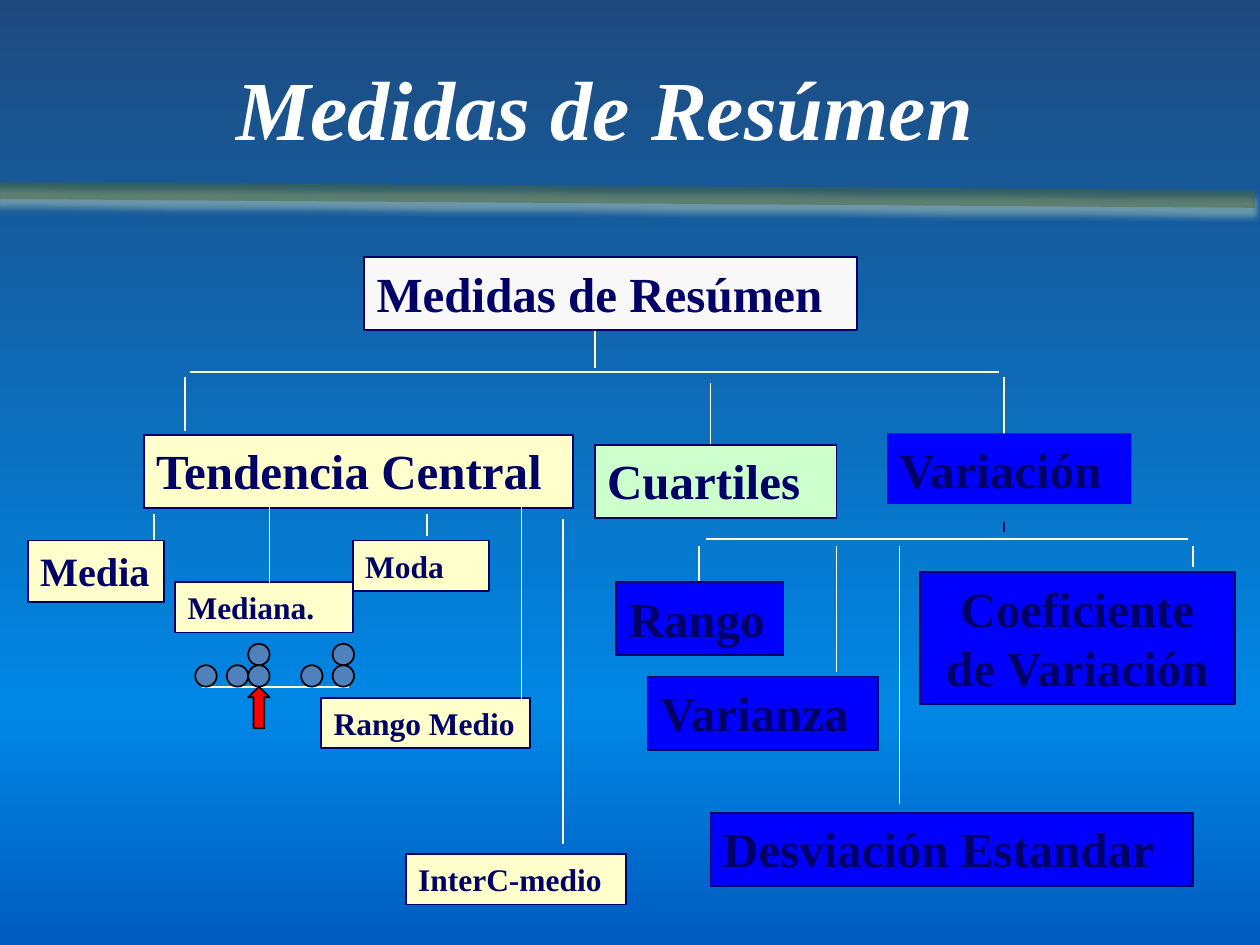
from typing import NamedTuple, Optional

from lxml.etree import SubElement
from pptx import Presentation
from pptx.dml.color import RGBColor
from pptx.enum.shapes import MSO_CONNECTOR, MSO_SHAPE
from pptx.enum.text import MSO_ANCHOR, PP_ALIGN
from pptx.oxml import parse_xml
from pptx.oxml.ns import nsdecls, qn
from pptx.util import Emu, Pt

EMU_PER_PX = 9144
FONT = "Times New Roman"
WHITE = RGBColor(0xFF, 0xFF, 0xFF)
OFF_WHITE = RGBColor(0xF8, 0xF8, 0xF8)
NAVY = RGBColor(0x00, 0x00, 0x66)
CREAM = RGBColor(0xFF, 0xFF, 0xCC)
MINT = RGBColor(0xCC, 0xFF, 0xCC)
BLUE = RGBColor(0x00, 0x00, 0xFF)
STEEL = RGBColor(0x4F, 0x81, 0xBD)
RED = RGBColor(0xFF, 0x00, 0x00)
BLACK = RGBColor(0x00, 0x00, 0x00)
OLIVE = RGBColor(0x4F, 0x62, 0x28)
SAGE = RGBColor(0xD7, 0xE4, 0xBD)
BACKGROUND_STOPS = (
    (0, RGBColor(0x1F, 0x49, 0x7D)),
    (75, RGBColor(0x00, 0x87, 0xE6)),
    (100, RGBColor(0x00, 0x5C, 0xBF)),
)


class Box(NamedTuple):
    text: str
    left: int
    top: int
    width: int
    height: int
    fill: RGBColor = CREAM
    size: int = 28
    align: PP_ALIGN = PP_ALIGN.LEFT
    outline: Optional[RGBColor] = NAVY


class Line(NamedTuple):
    x1: int
    y1: int
    x2: int
    y2: int
    color: RGBColor = CREAM
    width: int = 1


BOXES = (
    Box("Medidas de Resúmen", 289, 204, 391, 58, OFF_WHITE),
    Box("Tendencia Central", 114, 345, 341, 58),
    Box("Media", 22, 429, 108, 49, size=23),
    Box("Mediana.", 139, 462, 141, 40, size=18),
    Box("Moda", 280, 429, 108, 40, size=18),
    Box("Rango Medio", 255, 554, 166, 40, size=18),
    Box("InterC-medio", 322, 678, 175, 40, size=18),
    Box("Cuartiles", 472, 353, 192, 58, MINT),
    Box("Variación", 704, 344, 194, 56, BLUE, outline=None),
    Box("Rango", 489, 462, 133, 58, BLUE),
    Box("Varianza", 514, 537, 183, 58, BLUE),
    Box("Desviación Estandar", 564, 645, 383, 58, BLUE),
    Box("Coeficiente de Variación", 730, 454, 250, 105, BLUE, align=PP_ALIGN.CENTER),
)
LINES_BEHIND = (
    Line(472, 258, 472, 292),
    Line(151, 295, 793, 295),
    Line(147, 299, 147, 342),
    Line(564, 304, 564, 358),
    Line(797, 299, 797, 347),
    Line(122, 408, 122, 433),
    Line(339, 408, 339, 425),
    Line(447, 412, 447, 670),
    Line(797, 414, 797, 422, NAVY),
    Line(560, 428, 943, 428),
    Line(555, 433, 555, 467),
    Line(664, 433, 664, 533),
    Line(714, 433, 714, 638),
    Line(947, 433, 947, 450),
)
LINES_IN_FRONT = (
    Line(214, 399, 214, 467),
    Line(414, 399, 414, 558),
)
DIVIDER = Line(-4, 151, 996, 158, OLIVE, 10)
DOT_AXIS = Line(160, 545, 277, 545)
DOT_SIZE = 17
DOT_STACKS = ((155, 1), (180, 1), (197, 2), (239, 1), (264, 2))


def px(value: int) -> Emu:
    return Emu(value * EMU_PER_PX)


def write_text(shape, text: str, *, size: int, color: RGBColor = NAVY,
               align: PP_ALIGN = PP_ALIGN.LEFT, italic: bool = False) -> None:
    frame = shape.text_frame
    frame.word_wrap = True
    frame.vertical_anchor = MSO_ANCHOR.TOP
    paragraph = frame.paragraphs[0]
    paragraph.alignment = align
    paragraph.space_before = Pt(size / 10)
    run = paragraph.add_run()
    run.text = text
    run.font.name = FONT
    run.font.size = Pt(size)
    run.font.bold = True
    run.font.italic = italic
    run.font.color.rgb = color


def draw_shape(slide, kind: MSO_SHAPE, left: int, top: int, width: int, height: int,
               fill: RGBColor, outline: Optional[RGBColor]):
    shape = slide.shapes.add_shape(kind, px(left), px(top), px(width), px(height))
    shape.shadow.inherit = False
    shape.fill.solid()
    shape.fill.fore_color.rgb = fill
    if outline is None:
        shape.line.fill.background()
    else:
        shape.line.color.rgb = outline
        shape.line.width = Pt(1)
    return shape


def draw_box(slide, box: Box) -> None:
    shape = draw_shape(slide, MSO_SHAPE.RECTANGLE, box.left, box.top,
                       box.width, box.height, box.fill, box.outline)
    write_text(shape, box.text, size=box.size, align=box.align)


def draw_line(slide, line: Line):
    connector = slide.shapes.add_connector(
        MSO_CONNECTOR.STRAIGHT, px(line.x1), px(line.y1), px(line.x2), px(line.y2))
    connector.line.color.rgb = line.color
    connector.line.width = Pt(line.width)
    effects = SubElement(connector._element.spPr, qn("a:effectLst"))
    return connector, effects


def draw_divider(slide) -> None:
    connector, effects = draw_line(slide, DIVIDER)
    color = next(connector._element.spPr.iter(qn("a:srgbClr")))
    SubElement(color, qn("a:alpha"), val="44000")
    shadow = SubElement(effects, qn("a:outerShdw"), blurRad=str(Pt(4)),
                        dist=str(Pt(4)), dir="5400000", rotWithShape="0")
    SubElement(shadow, qn("a:srgbClr"), val=str(SAGE))


def draw_title(slide) -> None:
    title = slide.shapes.add_textbox(px(10), px(40), px(940), px(90))
    write_text(title, "Medidas de Resúmen", size=48, color=WHITE,
               align=PP_ALIGN.CENTER, italic=True)


def draw_dot_plot(slide) -> None:
    draw_line(slide, DOT_AXIS)
    for left, count in DOT_STACKS:
        for level in range(count, 0, -1):
            draw_shape(slide, MSO_SHAPE.OVAL, left, DOT_AXIS.y1 - level * DOT_SIZE,
                       DOT_SIZE, DOT_SIZE, STEEL, BLACK)
    draw_shape(slide, MSO_SHAPE.UP_ARROW, 197, DOT_AXIS.y1, DOT_SIZE, 33, RED, BLACK)


def paint_background(slide) -> None:
    stops = "".join(
        f'<a:gs pos="{percent * 1000}"><a:srgbClr val="{color}"/></a:gs>'
        for percent, color in BACKGROUND_STOPS)
    slide._element.cSld.insert(0, parse_xml(
        f'<p:bg {nsdecls("p", "a")}><p:bgPr><a:gradFill rotWithShape="0">'
        f'<a:gsLst>{stops}</a:gsLst><a:lin ang="5400000" scaled="0"/></a:gradFill>'
        '<a:effectLst/></p:bgPr></p:bg>'))


def main() -> None:
    presentation = Presentation()
    presentation.slide_width = px(1000)
    presentation.slide_height = px(750)
    slide = presentation.slides.add_slide(presentation.slide_layouts[6])
    paint_background(slide)
    draw_divider(slide)
    draw_title(slide)
    for line in LINES_BEHIND:
        draw_line(slide, line)
    for box in BOXES:
        draw_box(slide, box)
    for line in LINES_IN_FRONT:
        draw_line(slide, line)
    draw_dot_plot(slide)
    presentation.save("out.pptx")


if __name__ == "__main__":
    main()
